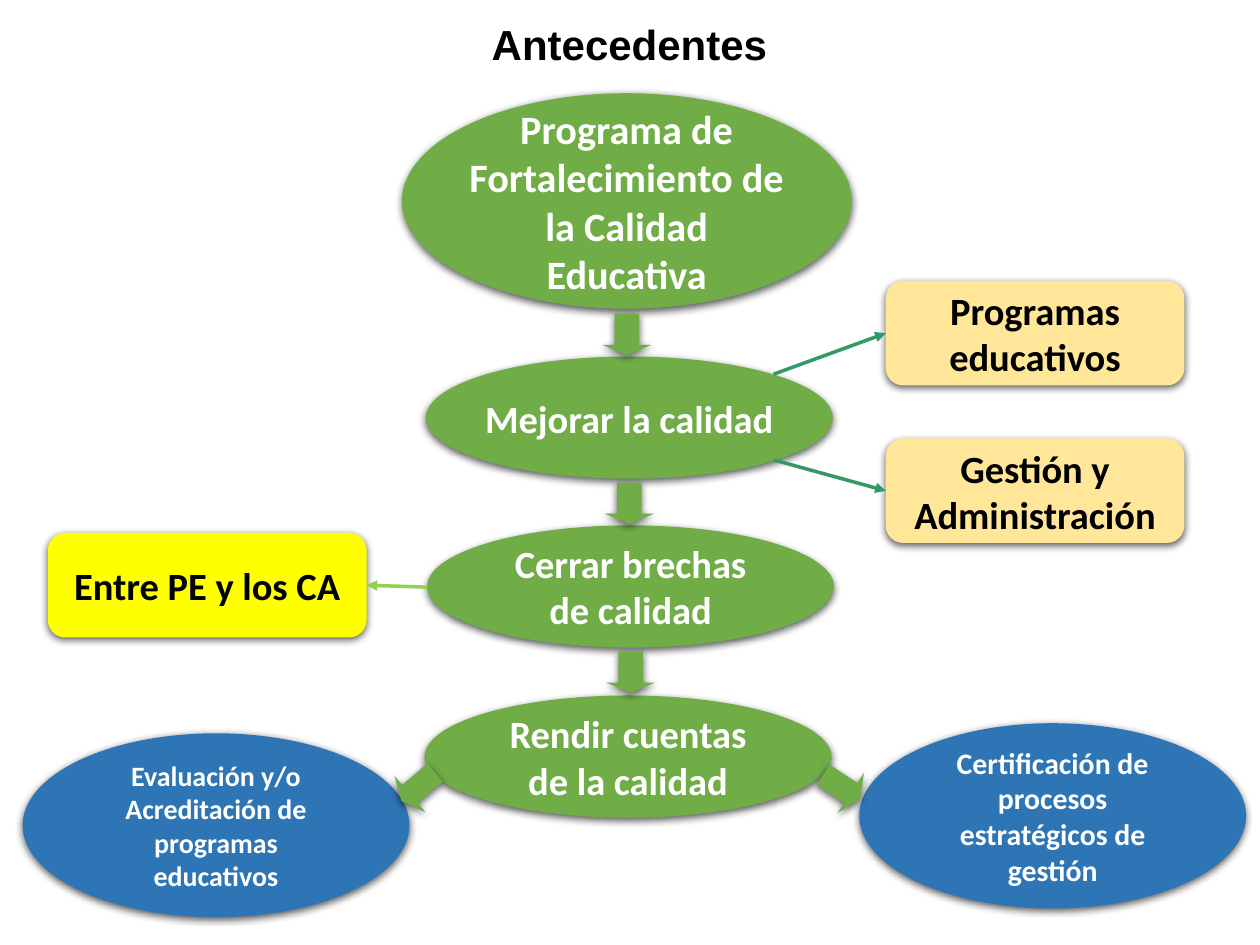
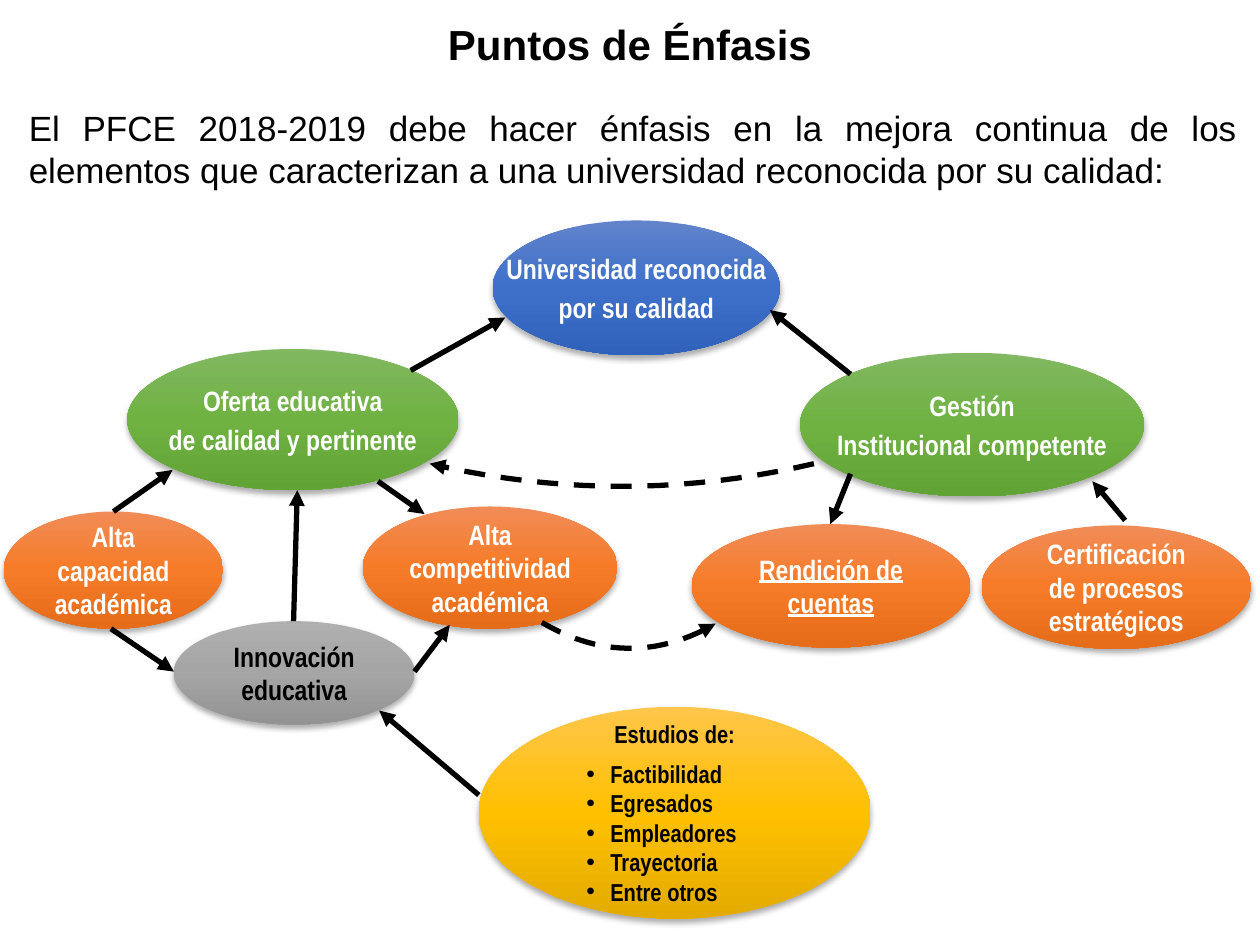
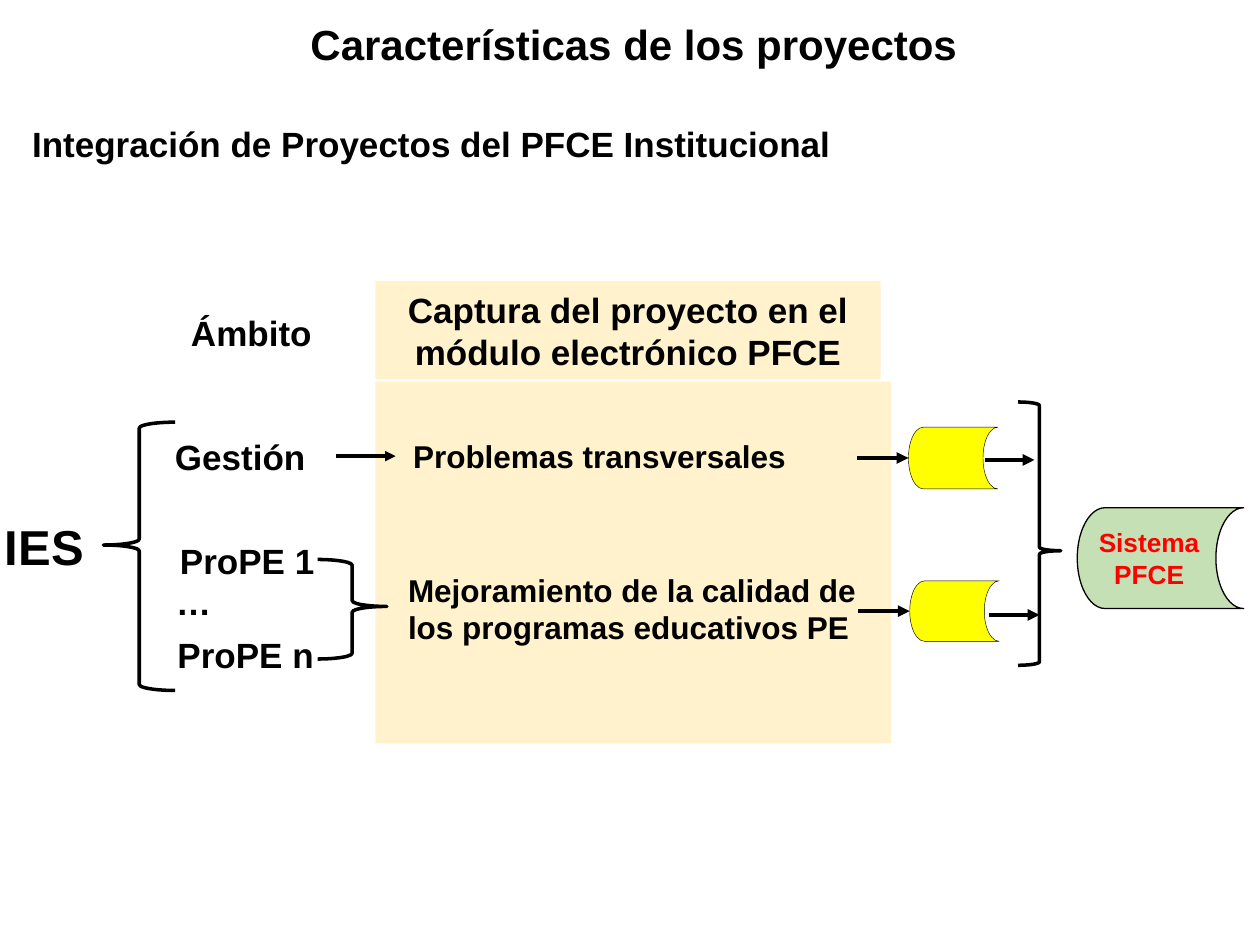
from copy import deepcopy

from lxml import etree
from pptx import Presentation
from pptx.dml.color import RGBColor
from pptx.enum.dml import MSO_LINE
from pptx.enum.shapes import MSO_CONNECTOR, MSO_SHAPE as SHAPE
from pptx.enum.text import MSO_ANCHOR as ANCHOR, PP_ALIGN as ALIGN
from pptx.oxml.ns import qn
from pptx.util import Inches, Pt

BLACK, WHITE, RED, YELLOW = "000000", "FFFFFF", "FF0000", "FFFF00"
GREEN, BLUE, SAND, CREAM = "70AD47", "2E75B6", "FFE699", "FFF2CC"
SEA, LIME, MINT = "339966", "92D050", "C5E0B4"
BLUE_GRAD = ("6183CB", "3E70CA", "3062BB")
GREEN_GRAD = ("81B861", "6FB242", "62A336")
ORANGE_GRAD = ("F18C57", "F67B28", "E56C19")
GOLD_GRAD = ("FFC64B", "FFC000", "E3AB00")
GRAY_GRAD = ("AFAFAF", "A5A5A5", "939393")
# opacity %, blur pt, distance pt
STRONG_SHADOW, SOFT_SHADOW = (63, 4.5, 1.5), (32, 3.5, 2.2)

# Antecedentes: box, text, format
STEPS = [
    ((3.19, 0.74, 3.57, 1.71), "Programa de Fortalecimiento de la Calidad Educativa",
     dict(size=23, insets=(0, 0, 0, 0))),
    ((3.38, 2.83, 3.23, 0.97), "Mejorar la calidad", dict(wrap=False)),
    ((3.39, 4.17, 3.23, 0.97), "Cerrar brechas de calidad", {}),
    ((3.37, 5.52, 3.23, 0.97), "Rendir cuentas de la calidad", {}),
]
RESULTS = [
    ((0.18, 5.82, 3.07, 1.46), "Evaluación y/o Acreditación de programas educativos", 16),
    ((6.82, 5.74, 3.07, 1.47), "Certificación de procesos estratégicos de gestión", 17),
]
# box, fill, text, line start, line colour, side joined
NOTES = [
    ((7.03, 2.23, 2.37, 0.83), SAND, "Programas educativos", (6.14, 2.97), SEA, 1),
    ((7.03, 3.48, 2.37, 0.83), SAND, "Gestión y Administración", (6.14, 3.65), SEA, 1),
    ((0.38, 4.23, 2.53, 0.83), YELLOW, "Entre PE y los CA", (3.39, 4.66), LIME, 3),
]
DOWN_ARROWS = [
    ((4.78, 2.49, 0.39, 0.33), 0), ((4.8, 3.83, 0.39, 0.33), 0),
    ((4.81, 5.17, 0.39, 0.33), 0), ((3.13, 6.07, 0.38, 0.35), 49.6),
    ((6.49, 6.07, 0.38, 0.35), 303.2),
]

# Puntos de Énfasis
EMPHASIS = ("El PFCE 2018-2019 debe hacer énfasis en la mejora continua de los elementos "
            "que caracterizan a una universidad reconocida por su calidad:")
ELEMENTS = [
    ((3.91, 1.75, 2.28, 1.07), BLUE_GRAD, ["Universidad reconocida", "por su calidad"],
     dict(wrap=False)),
    ((6.35, 2.8, 2.73, 1.14), GREEN_GRAD, ["Gestión", "Institucional competente"],
     dict(wrap=False)),
    ((1.01, 2.77, 2.63, 1.12), GREEN_GRAD, ["Oferta educativa", "de calidad y pertinente"],
     dict(wrap=False)),
    ((0.03, 4.06, 1.74, 0.93), ORANGE_GRAD, "Alta capacidad académica", {}),
    ((2.88, 4.02, 2.02, 0.97), ORANGE_GRAD, "Alta competitividad académica",
     dict(insets=(0.02, 0.05, 0.02, 0.05))),
    ((7.79, 4.17, 2.14, 0.98), ORANGE_GRAD, "Certificación de procesos estratégicos", {}),
    ((5.49, 4.16, 2.21, 0.98), ORANGE_GRAD, "Rendición de cuentas", dict(underline=True)),
    ((1.38, 4.93, 1.91, 0.82), GRAY_GRAD, "Innovación educativa", dict(color=BLACK)),
]
STUDIES_BOX = (3.8, 5.61, 3.11, 1.68)
STUDIES = ["Estudios de:", "Factibilidad", "Egresados", "Empleadores", "Trayectoria",
           "Entre otros"]
ELEMENT_LINKS = [
    ((6.75, 2.97), (6.11, 2.46)), ((3.26, 2.94), (4.01, 2.52)),
    ((0.9, 4.06), (1.37, 3.73)), ((3, 3.82), (3.37, 4.08)),
    ((3.29, 5.33), (3.57, 4.96)), ((8.93, 4.13), (8.67, 3.82)),
    ((6.75, 3.76), (6.59, 4.16)), ((0.88, 4.99), (1.38, 5.33)),
    ((2.33, 4.93), (2.36, 3.89)), ((3.8, 6.31), (3.01, 5.64)),
]
# start, end, depth
CURVED_LINKS = [((6.46, 3.68), (3.41, 3.68), 0.18), ((4.3, 4.94), (5.68, 4.95), 0.2)]

# Características de los proyectos
SCOPE_LABELS = [
    ((-0.06, 3.97, 0.95, 0.68), "IES", 28), ((1.29, 3.41, 1.4, 0.38), "Gestión", 20),
    ((1.33, 4.23, 1.4, 0.38), "ProPE 1", 20), ((1.3, 4.56, 1.4, 0.38), "…", 20),
    ((1.31, 4.98, 1.4, 0.38), "ProPE n", 20),
]
# box, adjustments, rotation
BRACES = [
    ((2.52, 4.44, 0.55, 0.79), (0.083, 0.472), 0),
    ((0.82, 3.35, 0.57, 2.13), (0.083, 0.542), 180),
    ((8.08, 3.19, 0.34, 2.09), (0.083, 0.565), 0),
]
# store box, left end of arrow in, start and end of arrow out
STORES = [
    ((7.21, 3.39, 0.71, 0.49), 6.8, (7.82, 3.65), (8.21, 3.65)),
    ((7.22, 4.61, 0.71, 0.48), 6.81, (7.85, 4.88), (8.25, 4.88)),
]
LABEL_INSETS = (0.1, 0.1, 0.1, 0.05)


def rgb(value):
    return RGBColor.from_string(value)


def inches(values):
    return [Inches(v) for v in values]


def sub(parent, tag, **attrs):
    return etree.SubElement(parent, qn(tag), {k: str(v) for k, v in attrs.items()})


def add_bullet(p):
    pPr = p._p.get_or_add_pPr()
    pPr.set("marL", str(Inches(0.49)))
    pPr.set("indent", str(Inches(-0.19)))
    sub(pPr, "a:buFont", typeface="Arial")
    sub(pPr, "a:buChar", char="•")


def write(s, text, size=20, color=BLACK, font="Arial", bold=True, underline=False,
          align=ALIGN.CENTER, anchor=ANCHOR.MIDDLE, wrap=True, gap=0,
          insets=(0.1, 0.05, 0.1, 0.05), bullets=False):
    """Fill s with one paragraph per item; bullets marks all items but the first."""
    tf = s.text_frame
    tf.word_wrap, tf.vertical_anchor = wrap, anchor
    tf.margin_left, tf.margin_top, tf.margin_right, tf.margin_bottom = inches(insets)
    for i, line in enumerate([text] if isinstance(text, str) else text):
        p = tf.add_paragraph() if i else tf.paragraphs[0]
        p.alignment = align
        if i and gap:
            p.space_before = Pt(gap)
        if bullets and i:
            p.alignment = ALIGN.LEFT
            add_bullet(p)
        r = p.add_run()
        r.text = line
        f = r.font
        f.name, f.size, f.bold, f.underline = font, Pt(size), bold, underline
        f.color.rgb = rgb(color)
    return s


def add_text(slide, box, text, anchor=ANCHOR.TOP, **fmt):
    return write(slide.shapes.add_textbox(*inches(box)), text, anchor=anchor, **fmt)


def add_title(slide, text, left, width):
    add_text(slide, (left, 0.1, width, 0.5), text, size=24)


def set_gradient(s, colors):
    s.fill.gradient()
    s.fill.gradient_angle = 270
    stops = s._element.spPr.find(qn("a:gradFill")).find(qn("a:gsLst"))
    stops.append(deepcopy(stops[0]))
    for stop, color, position in zip(s.fill.gradient_stops, colors, (0, 0.5, 1)):
        stop.color.rgb, stop.position = rgb(color), position


def add_box(slide, kind, box, fill=None, line=None, shadow=None, adj=(), rotation=0):
    """fill is None, a colour, or three gradient colours; line is (colour, points)."""
    s = slide.shapes.add_shape(kind, *inches(box))
    s.rotation = rotation
    for i, value in enumerate(adj):
        s.adjustments[i] = value
    if fill is None:
        s.fill.background()
    elif isinstance(fill, str):
        s.fill.solid()
        s.fill.fore_color.rgb = rgb(fill)
    else:
        set_gradient(s, fill)
    if line:
        s.line.color.rgb, s.line.width = rgb(line[0]), Pt(line[1])
    else:
        s.line.fill.background()
    s.shadow.inherit = False
    if shadow:
        alpha, blur, dist = shadow
        effects = s._element.spPr.find(qn("a:effectLst"))
        outer = sub(effects, "a:outerShdw", blurRad=Pt(blur), dist=Pt(dist), dir=5400000,
                    algn="ctr", rotWithShape=0)
        sub(sub(outer, "a:srgbClr", val=BLACK), "a:alpha", val=alpha * 1000)
    return s


def style_arrow(line, color, width):
    line.color.rgb, line.width = rgb(color), Pt(width)
    sub(line._get_or_add_ln(), "a:tailEnd", type="triangle")


def add_arrow(slide, start, end, color=BLACK, width=3, target=None, side=1):
    """Arrow from start to end, or to the middle of one side of target."""
    c = slide.shapes.add_connector(MSO_CONNECTOR.STRAIGHT, *inches(start + end))
    if target is not None:
        c.end_connect(target, side)
    style_arrow(c.line, color, width)
    sub(c._element.spPr, "a:effectLst")


def add_curve(slide, start, end, depth, steps=20):
    """Dashed arrow that sags by depth between start and end."""
    (x0, y0), (x1, y1) = start, end
    points = []
    for i in range(steps + 1):
        t = i / steps
        points.append(inches((x0 + (x1 - x0) * t,
                              y0 + (y1 - y0) * t + 4 * depth * t * (1 - t))))
    builder = slide.shapes.build_freeform(*points[0], scale=1.0)
    builder.add_line_segments(points[1:], close=False)
    s = builder.convert_to_shape()
    s.fill.background()
    s.line.dash_style = MSO_LINE.DASH
    style_arrow(s.line, BLACK, 3)
    s.shadow.inherit = False


def build_background(slide):
    add_title(slide, "Antecedentes", 3.79, 2.41)
    base = dict(size=22, font="Calibri", color=WHITE)
    for box, text, fmt in STEPS:
        s = add_box(slide, SHAPE.OVAL, box, GREEN, shadow=STRONG_SHADOW)
        write(s, text, **{**base, **fmt})
    for box, text, size in RESULTS:
        s = add_box(slide, SHAPE.OVAL, box, BLUE, shadow=STRONG_SHADOW)
        write(s, text, **{**base, "size": size})
    for box, fill, text, start, color, side in NOTES:
        s = add_box(slide, SHAPE.FLOWCHART_ALTERNATE_PROCESS, box, fill, shadow=STRONG_SHADOW)
        write(s, text, **{**base, "color": BLACK})
        add_arrow(slide, start, box[:2], color, 2, target=s, side=side)
    for box, rotation in DOWN_ARROWS:
        add_box(slide, SHAPE.DOWN_ARROW, box, GREEN, shadow=STRONG_SHADOW,
                adj=(0.5, 0.25), rotation=rotation)


def build_emphasis(slide):
    add_title(slide, "Puntos de Énfasis", 3.44, 3.12)
    add_text(slide, (0.13, 0.8, 9.79, 0.77), EMPHASIS, bold=False, align=ALIGN.JUSTIFY)
    base = dict(size=16, font="Arial Narrow", color=WHITE, gap=3)
    for box, colors, text, fmt in ELEMENTS:
        s = add_box(slide, SHAPE.OVAL, box, colors, shadow=SOFT_SHADOW)
        write(s, text, **{**base, **fmt})
    s = add_box(slide, SHAPE.OVAL, STUDIES_BOX, GOLD_GRAD, shadow=SOFT_SHADOW)
    write(s, STUDIES, size=14, font="Arial Narrow", bullets=True)
    s.text_frame.paragraphs[0].space_after = Pt(6)
    for start, end in ELEMENT_LINKS:
        add_arrow(slide, start, end)
    for start, end, depth in CURVED_LINKS:
        add_curve(slide, start, end, depth)


def build_projects(slide):
    add_title(slide, "Características de los proyectos", 2.3, 5.46)
    add_text(slide, (0.13, 0.92, 6.59, 0.44),
             "Integración de Proyectos del PFCE Institucional", wrap=False)
    s = add_box(slide, SHAPE.RECTANGLE, (1.02, 2.23, 1.95, 0.77), WHITE)
    write(s, "Ámbito", wrap=False, insets=LABEL_INSETS)
    s = add_box(slide, SHAPE.RECTANGLE, (2.98, 2.23, 4.01, 0.78), CREAM)
    write(s, "Captura del proyecto en el módulo electrónico PFCE")
    add_box(slide, SHAPE.RECTANGLE, (2.98, 3.03, 4.09, 2.87), CREAM)
    for box, text, size in SCOPE_LABELS:
        add_text(slide, box, text, size=size, anchor=ANCHOR.MIDDLE, align=ALIGN.LEFT,
                 insets=LABEL_INSETS)
    add_text(slide, (3.18, 3.42, 3.19, 0.4), "Problemas transversales", size=18,
             align=ALIGN.LEFT, wrap=False)
    add_text(slide, (3.14, 4.48, 3.83, 0.71),
             "Mejoramiento de la calidad de los programas educativos PE", size=18,
             align=ALIGN.LEFT)
    add_arrow(slide, (2.67, 3.62), (3.14, 3.62), width=2)
    for box, left_in, start_out, end_out in STORES:
        s = add_box(slide, SHAPE.FLOWCHART_STORED_DATA, box, YELLOW, (BLACK, 0.25))
        middle = box[1] + box[3] / 2
        add_arrow(slide, (left_in, middle), (box[0], middle), width=2.25, target=s)
        add_arrow(slide, start_out, end_out, width=2.25)
    for box, adj, rotation in BRACES:
        add_box(slide, SHAPE.RIGHT_BRACE, box, line=(BLACK, 2), adj=adj, rotation=rotation)
    add_box(slide, SHAPE.FLOWCHART_STORED_DATA, (8.55, 4.03, 1.32, 0.8), MINT, (BLACK, 0.75))
    add_text(slide, (8.6, 4.13, 1.04, 0.61), "Sistema PFCE", size=15, color=RED)


def main():
    prs = Presentation()
    prs.slide_width, prs.slide_height = Inches(10), Inches(7.5)
    for build in (build_background, build_emphasis, build_projects):
        build(prs.slides.add_slide(prs.slide_layouts[6]))
    prs.save("out.pptx")


if __name__ == "__main__":
    main()
